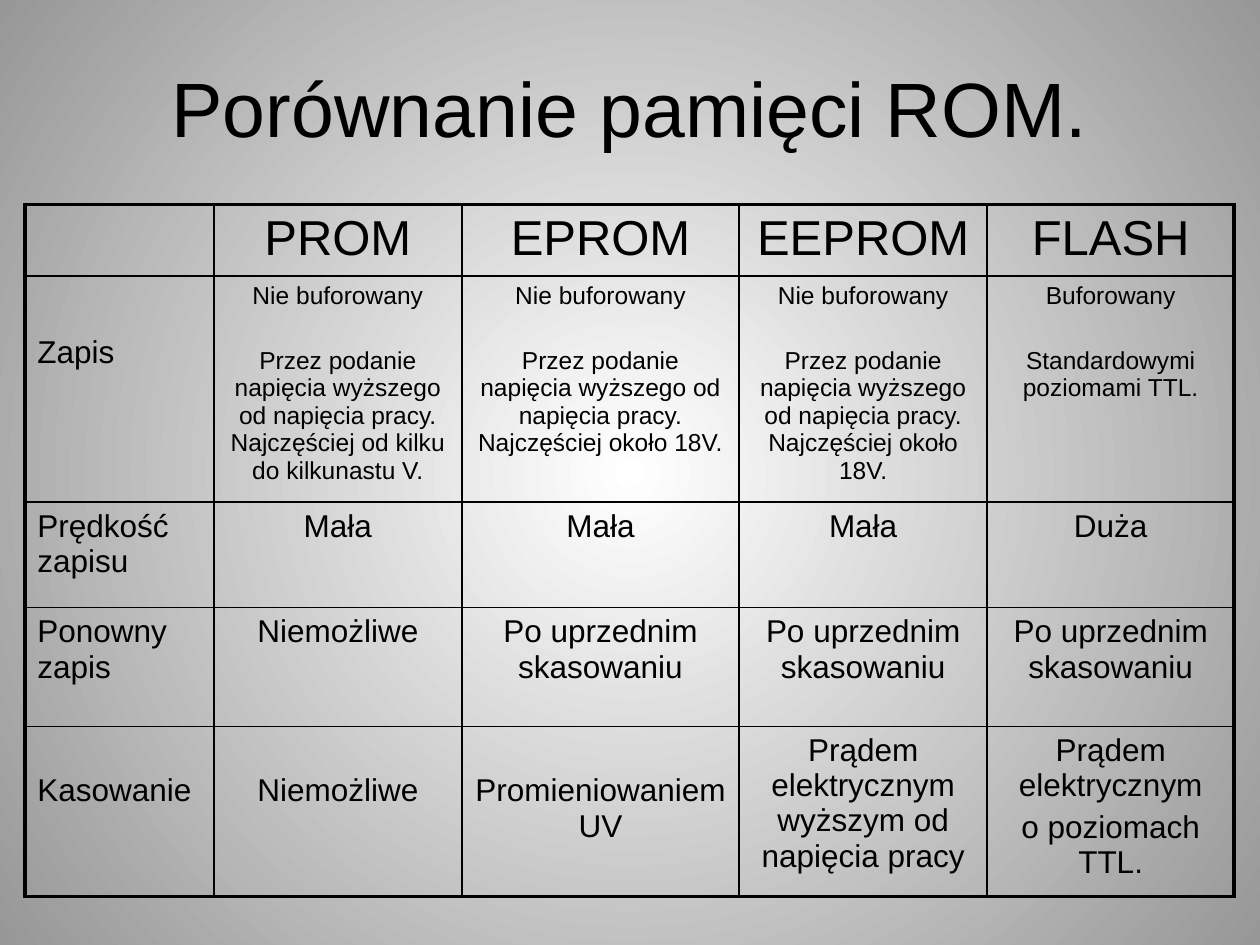
import pptx
import pptx.dml.color
import pptx.enum.text
import pptx.oxml
import pptx.oxml.ns
import pptx.util
from pptx.util import Cm

BLACK = pptx.dml.color.RGBColor(0x00, 0x00, 0x00)
WHITE = pptx.dml.color.RGBColor(0xFF, 0xFF, 0xFF)
GREY = pptx.dml.color.RGBColor(0x97, 0x97, 0x97)
NS = pptx.oxml.ns.nsdecls("a")
CENTER = pptx.enum.text.PP_ALIGN.CENTER
LEFT = pptx.enum.text.PP_ALIGN.LEFT

COLUMNS = [3.81, 5, 5.59, 5, 4.98]
ROWS = [1.35, 4.33, 2.13, 2.39, 3.22]
SIZES = [28, 14, 18, 18, 18]
GAPS = [0, 21, 0, 0, 3.6]
VOLTAGE = "Przez podanie napięcia wyższego od napięcia pracy. Najczęściej "
UNBUFFERED = "Nie buforowany\n" + VOLTAGE
AFTER_ERASE = "Po uprzednim skasowaniu"
CELLS = [
    ["", "PROM", "EPROM", "EEPROM", "FLASH"],
    ["Zapis", UNBUFFERED + "od kilku do kilkunastu V.", UNBUFFERED + "około 18V.",
     UNBUFFERED + "około 18V.", "Buforowany\nStandardowymi poziomami TTL."],
    ["Prędkość zapisu", "Mała", "Mała", "Mała", "Duża"],
    ["Ponowny zapis", "Niemożliwe", AFTER_ERASE, AFTER_ERASE, AFTER_ERASE],
    ["Kasowanie", "Niemożliwe", "Promieniowaniem UV",
     "Prądem elektrycznym wyższym od napięcia pracy",
     "Prądem elektrycznym\no poziomach TTL."],
]
TOP_MARGINS = {(1, 0): 1.19, (4, 0): 0.95, (4, 1): 0.95, (4, 2): 0.95}


def write(tf, text, font="Arial", size=18, color=BLACK, align=CENTER, gap=0):
    tf.word_wrap = True
    for i, line in enumerate(text.split("\n")):
        p = tf.paragraphs[0] if i == 0 else tf.add_paragraph()
        p.alignment = align
        p.space_before = pptx.util.Pt(gap if i else 0)
        p.font.size = pptx.util.Pt(size)
        if line:
            r = p.add_run()
            r.text = line
            r.font.name = font
            r.font.size = pptx.util.Pt(size)
            r.font.color.rgb = color


class Deck:
    def __init__(self, width, height):
        self.prs = pptx.Presentation()
        self.prs.slide_width, self.prs.slide_height = Cm(width), Cm(height)
        self.s = self.prs.slides.add_slide(self.prs.slide_layouts[6])
        self.thin, self.thick = 1, 2.25

    def background(self, inner, outer):
        fill = self.s.background.fill
        fill.gradient()
        for stop, color, position in zip(fill.gradient_stops, (inner, outer), (0, 1)):
            stop.color.rgb = color
            stop.position = position
        grad = next(self.s.element.iter(pptx.oxml.ns.qn("a:gradFill")))
        lin = grad.find(pptx.oxml.ns.qn("a:lin"))
        grad.replace(lin, pptx.oxml.parse_xml(
            f'<a:path {NS} path="circle">'
            '<a:fillToRect l="50000" t="50000" r="50000" b="50000"/></a:path>'))

    def title(self, text, x, y, w, h):
        sp = self.s.shapes.add_textbox(Cm(x), Cm(y), Cm(w), Cm(h))
        sp.text_frame.vertical_anchor = pptx.enum.text.MSO_ANCHOR.MIDDLE
        write(sp.text_frame, text, size=44)

    def borders(self, cell, outer_sides):
        tcPr = cell._tc.get_or_add_tcPr()
        for i, side in enumerate("LRTB"):
            width = pptx.util.Pt(self.thick if side in outer_sides else self.thin)
            tcPr.insert(i, pptx.oxml.parse_xml(
                f'<a:ln{side} {NS} w="{width}"><a:solidFill>'
                f'<a:srgbClr val="{BLACK}"/></a:solidFill></a:ln{side}>'))

    def table(self, x, y):
        last_row, last_col = len(ROWS) - 1, len(COLUMNS) - 1
        table = self.s.shapes.add_table(
            len(ROWS), len(COLUMNS), Cm(x), Cm(y), Cm(sum(COLUMNS)), Cm(sum(ROWS))).table
        table.first_row = table.horz_banding = False
        for column, width in zip(table.columns, COLUMNS):
            column.width = Cm(width)
        for i, height in enumerate(ROWS):
            table.rows[i].height = Cm(height)
            for j, text in enumerate(CELLS[i]):
                cell = table.cell(i, j)
                cell.fill.background()
                cell.margin_top = Cm(TOP_MARGINS.get((i, j), 0.13))
                write(cell.text_frame, text, size=SIZES[i] if i == 0 or j else 18,
                      align=CENTER if j else LEFT, gap=GAPS[i])
                edges = {"L": j == 0, "R": j == last_col, "T": i == 0, "B": i == last_row}
                self.borders(cell, [side for side, outer in edges.items() if outer])


def main():
    deck = Deck(25.4, 19.05)
    deck.background(WHITE, GREY)
    deck.title("Porównanie pamięci ROM.", 1.27, 0.76, 22.86, 2.77)
    deck.table(0.5, 4.12)
    deck.prs.save("out.pptx")


if __name__ == "__main__":
    main()
